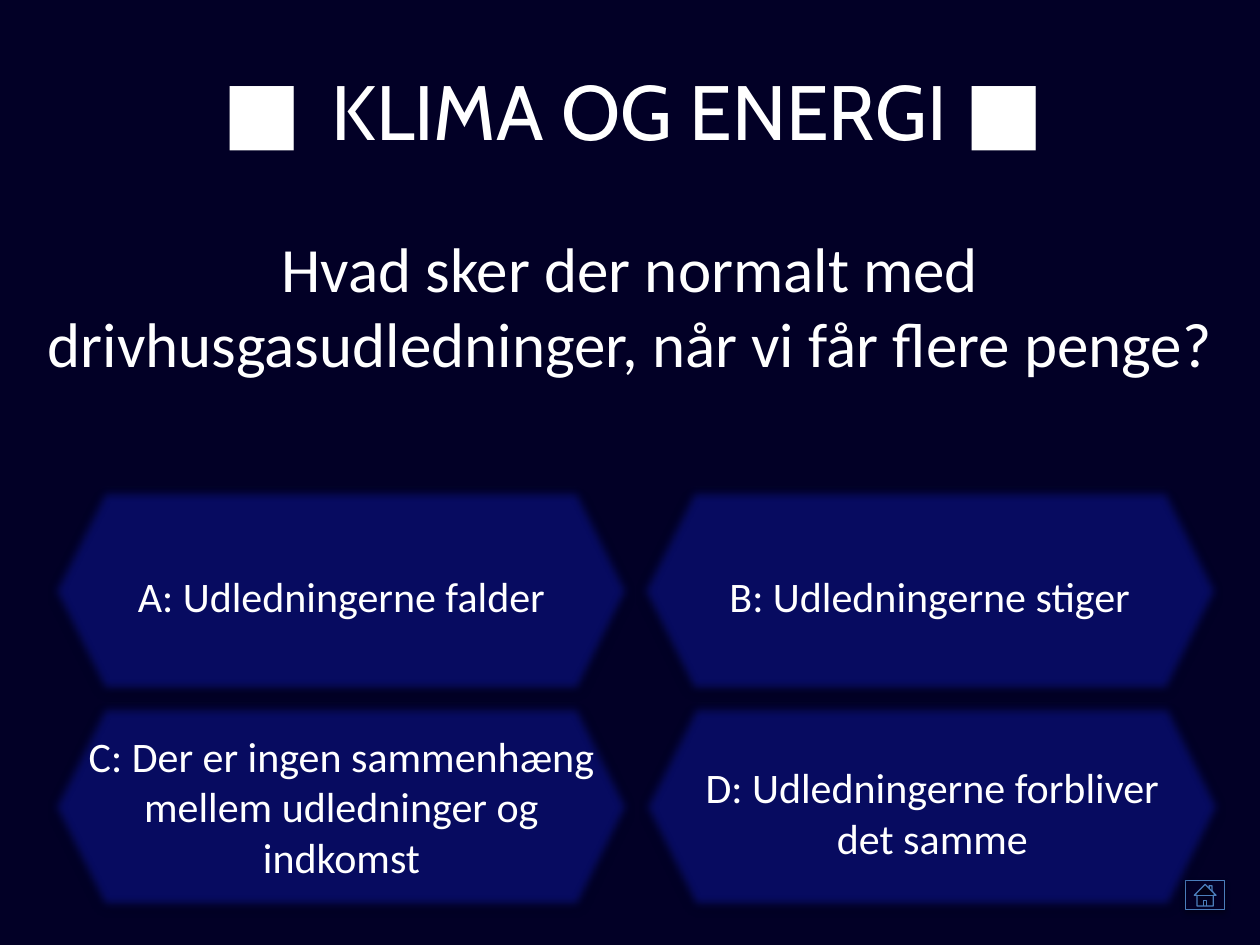
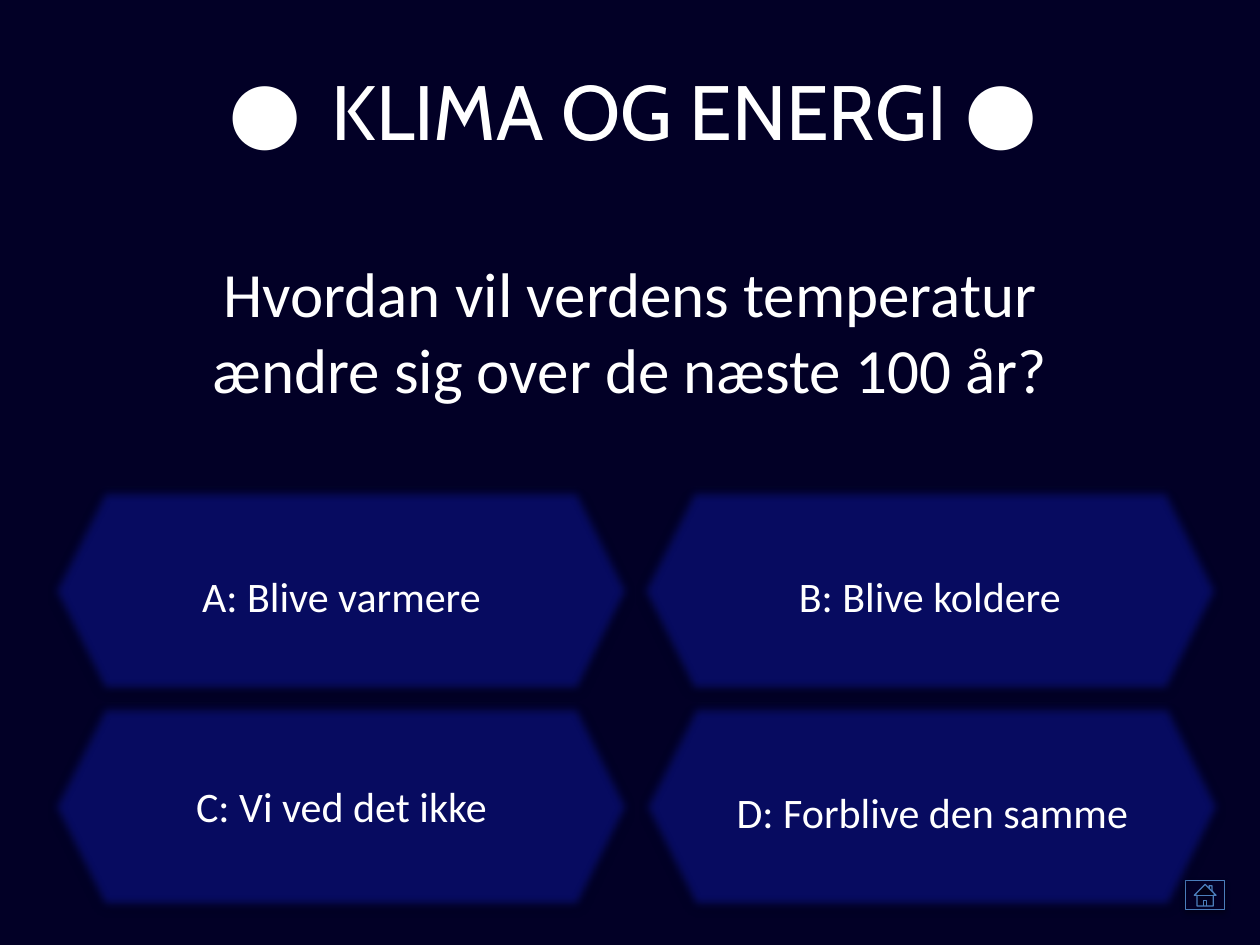
from dataclasses import dataclass

from lxml.etree import SubElement
from pptx import Presentation
from pptx.dml.color import RGBColor
from pptx.enum.shapes import MSO_SHAPE
from pptx.enum.text import MSO_ANCHOR, MSO_AUTO_SIZE, PP_ALIGN
from pptx.oxml.ns import qn
from pptx.util import Inches, Pt

# Shared style
NIGHT, NAVY, STEEL, WHITE = "020026", "070B60", "4B7EBC", "FFFFFF"
BODY_FONT, TITLE_FONT, SYMBOL_FONT = "Calibri", "Cabin", "Comic Neue"
CATEGORY = "KLIMA OG ENERGI"
TITLE_ONLY_LAYOUT = 5


@dataclass(frozen=True)
class Box:
    left: float
    top: float
    width: float
    height: float

    def lengths(self) -> list:
        return [Inches(v) for v in (self.left, self.top, self.width, self.height)]


@dataclass(frozen=True)
class Answer:
    text: str
    box: Box


@dataclass(frozen=True)
class Quiz:
    symbol: str
    question: list[str]
    question_top: float
    answers: list[Answer]


TITLE_BOX = Box(0.33, 0.39, 9.39, 0.91)
HOME_BOX = Box(9.41, 6.99, 0.31, 0.23)
HEXAGON_BOXES = [Box(left, top, 4.69, 1.66)
                 for left, top in ((5.05, 5.57), (0.36, 5.57), (0.36, 3.86), (5.03, 3.86))]

# Answer text areas
A_BOX = Box(0.6, 4.48, 4.22, 0.5)
B_BOX = Box(5.35, 4.48, 4.06, 0.5)
C_BOX = Box(0.6, 5.74, 4.22, 1.31)
D_BOX = Box(5.37, 6.19, 4.06, 0.5)
D_TALL_BOX = Box(5.37, 5.99, 4.06, 0.91)

QUIZZES = [
    Quiz("■", ["Hvad sker der normalt med drivhusgasudledninger, når vi får flere penge?"], 1.77, [
        Answer("A: Udledningerne falder", A_BOX),
        Answer("D: Udledningerne forbliver det samme", D_TALL_BOX),
        Answer("C: Der er ingen sammenhæng mellem udledninger og indkomst", C_BOX),
        Answer("B: Udledningerne stiger", B_BOX),
    ]),
    Quiz("●", ["Hvordan vil verdens temperatur", "ændre sig over de næste 100 år?"], 1.97, [
        Answer("A: Blive varmere", A_BOX),
        Answer("D: Forblive den samme", D_BOX),
        Answer("C: Vi ved det ikke", C_BOX),
        Answer("B: Blive koldere", B_BOX),
    ]),
]


def color(value: str) -> RGBColor:
    return RGBColor.from_string(value)


def style_font(font, name: str, size: int, bold: bool = False) -> None:
    font.name, font.size, font.bold = name, Pt(size), bold
    font.color.rgb = color(WHITE)


def add_panel(slide, kind: MSO_SHAPE, box: Box, fill: str, soft: bool = False) -> None:
    """Outlined shape with a small drop shadow and, if asked, soft edges."""
    panel = slide.shapes.add_shape(kind, *box.lengths())
    panel.fill.solid()
    panel.fill.fore_color.rgb = color(fill)
    panel.line.color.rgb = color(STEEL)
    panel.line.width = Pt(0.75)
    panel.shadow.inherit = False
    effects = panel._element.spPr.find(qn("a:effectLst"))
    shadow = SubElement(effects, qn("a:outerShdw"), blurRad=str(Pt(3.1)),
                        dist=str(Pt(1.8)), dir="5400000", rotWithShape="0")
    black = SubElement(shadow, qn("a:srgbClr"), val="000000")
    SubElement(black, qn("a:alpha"), val="35000")
    if soft:
        SubElement(effects, qn("a:softEdge"), rad=str(Pt(5)))


def add_text(slide, lines: list[str], box: Box, size: int, anchor: MSO_ANCHOR) -> None:
    frame = slide.shapes.add_textbox(*box.lengths()).text_frame
    frame.word_wrap = True
    frame.auto_size = MSO_AUTO_SIZE.SHAPE_TO_FIT_TEXT
    frame.vertical_anchor = anchor
    frame.text = "\n".join(lines)
    for paragraph in frame.paragraphs:
        paragraph.alignment = PP_ALIGN.CENTER
        style_font(paragraph.font, BODY_FONT, size)


def set_title(slide, symbol: str) -> None:
    title = slide.shapes.title
    title.left, title.top, title.width, title.height = TITLE_BOX.lengths()
    frame = title.text_frame
    frame.auto_size = MSO_AUTO_SIZE.SHAPE_TO_FIT_TEXT
    frame.vertical_anchor = MSO_ANCHOR.MIDDLE
    paragraph = frame.paragraphs[0]
    paragraph.alignment = PP_ALIGN.CENTER
    for text, name, size, bold in ((f"{symbol} ", SYMBOL_FONT, 48, True),
                                   (f"{CATEGORY} ", TITLE_FONT, 44, False),
                                   (symbol, SYMBOL_FONT, 48, True)):
        run = paragraph.add_run()
        run.text = text
        style_font(run.font, name, size, bold)


def add_quiz(prs, quiz: Quiz) -> None:
    slide = prs.slides.add_slide(prs.slide_layouts[TITLE_ONLY_LAYOUT])
    add_panel(slide, MSO_SHAPE.ACTION_BUTTON_HOME, HOME_BOX, NIGHT)
    set_title(slide, quiz.symbol)
    add_text(slide, quiz.question, Box(0, quiz.question_top, 10, 1.31), 36, MSO_ANCHOR.TOP)
    for box in HEXAGON_BOXES:
        add_panel(slide, MSO_SHAPE.HEXAGON, box, NAVY, soft=True)
    for answer in quiz.answers:
        add_text(slide, [answer.text], answer.box, 24, MSO_ANCHOR.MIDDLE)


def main() -> None:
    prs = Presentation()
    prs.slide_width, prs.slide_height = Inches(10), Inches(7.5)
    background = prs.slide_master.background.fill
    background.solid()
    background.fore_color.rgb = color(NIGHT)
    for quiz in QUIZZES:
        add_quiz(prs, quiz)
    prs.save("out.pptx")


if __name__ == "__main__":
    main()
